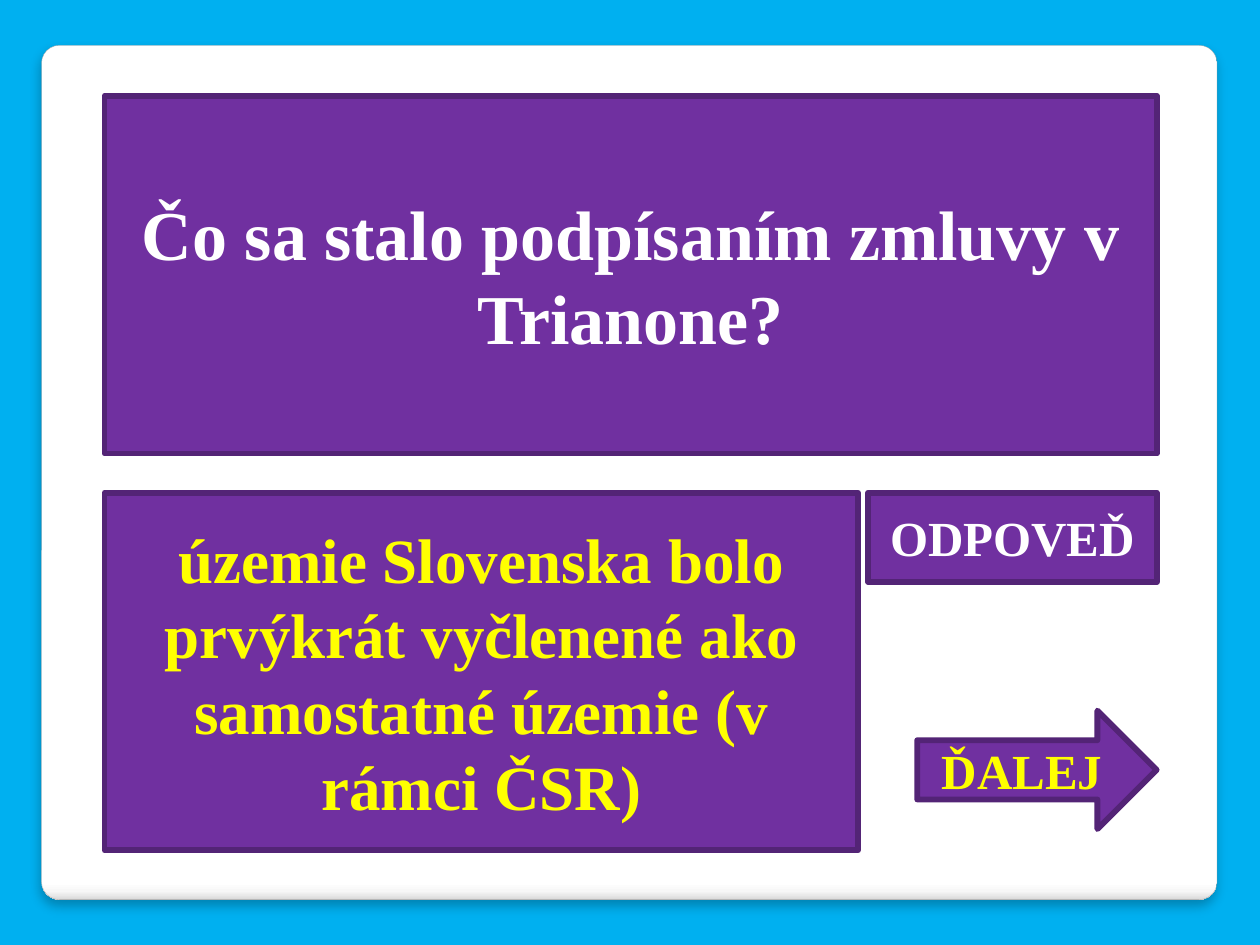
from lxml import etree
from pptx import Presentation
from pptx.dml.color import RGBColor
from pptx.enum.shapes import MSO_SHAPE
from pptx.enum.text import MSO_ANCHOR, MSO_AUTO_SIZE, PP_ALIGN
from pptx.oxml.ns import qn
from pptx.util import Inches, Pt

RECTANGLE, ROUNDED, ARROW = MSO_SHAPE.RECTANGLE, MSO_SHAPE.ROUNDED_RECTANGLE, MSO_SHAPE.RIGHT_ARROW
MIDDLE, CENTER, NO_FIT = MSO_ANCHOR.MIDDLE, PP_ALIGN.CENTER, MSO_AUTO_SIZE.NONE
FONT = "Times New Roman"
SKY, PURPLE, DARK_PURPLE, GRAY = "00B0F0", "7030A0", "532476", "A4A4A4"
WHITE, YELLOW = "FFFFFF", "FFFF00"
CARD_STOPS = [(0, WHITE), (98, WHITE), (99, "F7F7F7"), (100, "DADADA")]
LEFT, RIGHT, ANSWER_TOP, PANEL_HEIGHT = 0.83, 9.18, 3.91, 2.84


def color(value):
    """Turn a hex string into a colour."""
    return RGBColor.from_string(value)


def add_node(parent, tag, **attributes):
    """Append a drawing element and return it."""
    node = etree.SubElement(parent, qn(tag))
    for name, value in attributes.items():
        node.set(name, str(value))
    return node


def place(shape, box):
    """Set a shape's left, top, width and height in inches."""
    shape.left, shape.top, shape.width, shape.height = map(Inches, box)


def add_card(page, box):
    """Add the white rounded card with its gradient edge and soft shadow."""
    card = page.shapes.add_shape(ROUNDED, *map(Inches, box))
    card.adjustments[0] = 0.021
    card.fill.gradient()
    card.fill.gradient_angle = 270
    properties = card._element.spPr
    stops = properties.find(".//" + qn("a:gsLst"))
    for stop in list(stops):
        stops.remove(stop)
    for percent, value in CARD_STOPS:
        stop = add_node(stops, "a:gs", pos=percent * 1000)
        add_node(stop, "a:srgbClr", val=value)
    card.line.color.rgb = color(GRAY)
    card.line.width = Pt(0.16)
    card.shadow.inherit = False
    shadow = add_node(properties.find(qn("a:effectLst")), "a:outerShdw",
                      blurRad=Pt(6), dist=Pt(4), dir=90 * 60000, rotWithShape=0)
    add_node(add_node(shadow, "a:srgbClr", val="000000"), "a:alpha", val=25000)
    return card


def style_panel(panel, text, size, text_color):
    """Give a panel its purple look and centred bold text."""
    panel.fill.solid()
    panel.fill.fore_color.rgb = color(PURPLE)
    panel.line.color.rgb = color(DARK_PURPLE)
    panel.line.width = Pt(3.35)
    add_node(panel._element.spPr.find(qn("a:ln")), "a:round")
    panel.shadow.inherit = False
    frame = panel.text_frame
    frame.text = text
    frame.word_wrap = True
    frame.auto_size = NO_FIT
    frame.vertical_anchor = MIDDLE
    para = frame.paragraphs[0]
    para.alignment = CENTER
    font = para.runs[0].font
    font.name, font.size, font.bold = FONT, Pt(size), True
    font.color.rgb = color(text_color)


def add_panel(page, kind, box, text, size, text_color):
    """Add a purple shape with text in the given box."""
    panel = page.shapes.add_shape(kind, *map(Inches, box))
    style_panel(panel, text, size, text_color)


def add_question(page, box):
    """Put the question in the title placeholder."""
    place(page.shapes.title, box)
    style_panel(page.shapes.title, "Čo sa stalo podpísaním zmluvy v Trianone?", 40, WHITE)


def build_quiz_page(deck):
    """Build the question page with its answer and buttons."""
    page = deck.slides.add_slide(deck.slide_layouts[5])
    page.background.fill.solid()
    page.background.fill.fore_color.rgb = color(SKY)
    card = add_card(page, (0.33, 0.36, 9.33, 6.78))
    page.shapes.title._element.addprevious(card._element)
    add_question(page, (LEFT, 0.76, RIGHT - LEFT, PANEL_HEIGHT))
    add_panel(page, RECTANGLE, (LEFT, ANSWER_TOP, 5.98, PANEL_HEIGHT),
              "územie Slovenska bolo prvýkrát vyčlenené ako samostatné územie (v rámci ČSR)",
              36, YELLOW)
    add_panel(page, RECTANGLE, (RIGHT - 2.29, ANSWER_TOP, 2.29, 0.71), "ODPOVEĎ", 28, WHITE)
    add_panel(page, ARROW, (RIGHT - 1.9, 5.64, 1.9, 0.94), "ĎALEJ", 28, YELLOW)


def main():
    """Create and save the deck."""
    deck = Presentation()
    deck.slide_width, deck.slide_height = Inches(10), Inches(7.5)
    build_quiz_page(deck)
    deck.save("out.pptx")


if __name__ == "__main__":
    main()
